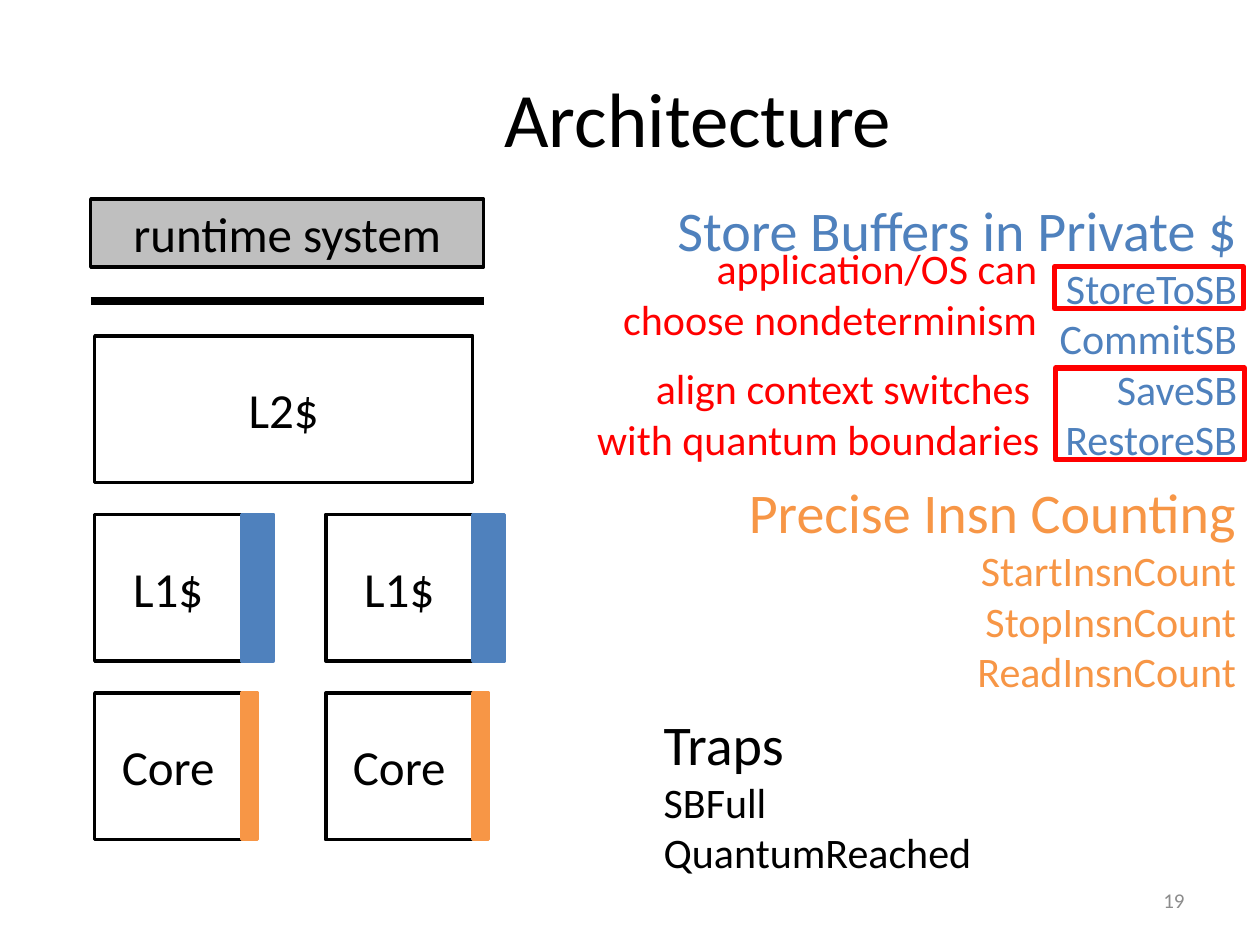
from dataclasses import dataclass

import pptx
import pptx.dml.color
import pptx.enum.shapes
import pptx.enum.text
import pptx.oxml.ns
import pptx.util
from lxml import etree

Cm = pptx.util.Cm
Pt = pptx.util.Pt
ALIGN = pptx.enum.text.PP_ALIGN
ANCHOR = pptx.enum.text.MSO_ANCHOR


@dataclass(frozen=True)
class Theme:
    font: str = "Calibri"
    ink: str = "000000"
    gray: str = "BFBFBF"
    number: str = "8C8C8C"
    buffer: str = "4F81BD"
    counter: str = "F79646"
    alert: str = "FF0000"
    title: int = 44
    heading: int = 32
    block: int = 28
    body: int = 24
    small: int = 12
    outline: float = 2
    highlight: float = 3
    divider: float = 4.5


@dataclass(frozen=True)
class Box:
    """A region in centimetres."""
    left: float
    top: float
    width: float
    height: float

    def inner(self, dx, dy, width, height):
        return Box(self.left + dx, self.top + dy, width, height)

    def emu(self):
        return Cm(self.left), Cm(self.top), Cm(self.width), Cm(self.height)


THEME = Theme()


def rgb(code):
    return pptx.dml.color.RGBColor.from_string(code)


def write_run(paragraph, text, size, color):
    run = paragraph.add_run()
    run.text = text
    run.font.name = THEME.font
    run.font.size = Pt(size)
    run.font.color.rgb = rgb(color)


def add_block(shapes, box, label="", fill=None, line=THEME.ink, weight=THEME.outline):
    block = shapes.add_shape(pptx.enum.shapes.MSO_SHAPE.RECTANGLE, *box.emu())
    block.shadow.inherit = False
    if fill:
        block.fill.solid()
        block.fill.fore_color.rgb = rgb(fill)
    else:
        block.fill.background()
    block.line.color.rgb = rgb(line)
    block.line.width = Pt(weight)
    if label:
        block.text_frame.vertical_anchor = ANCHOR.MIDDLE
        paragraph = block.text_frame.paragraphs[0]
        paragraph.alignment = ALIGN.CENTER
        write_run(paragraph, label, THEME.block, THEME.ink)


def add_lines(shapes, box, lines, color, align):
    """Unwrapped text, one paragraph for each (text, size)."""
    frame = shapes.add_textbox(*box.emu()).text_frame
    frame.word_wrap = False
    frame.auto_size = pptx.enum.text.MSO_AUTO_SIZE.SHAPE_TO_FIT_TEXT
    for index, (text, size) in enumerate(lines):
        paragraph = frame.add_paragraph() if index else frame.paragraphs[0]
        paragraph.alignment = align
        write_run(paragraph, text, size, color)


def add_caption(shapes, box, text, size, color, align, indent=0.25):
    """A single anchored line: the title or the slide number."""
    frame = shapes.add_textbox(*box.emu()).text_frame
    frame.word_wrap = True
    frame.vertical_anchor = ANCHOR.MIDDLE
    frame.margin_left = Cm(indent)
    frame.paragraphs[0].alignment = align
    write_run(frame.paragraphs[0], text, size, color)


def add_hardware_stack(shapes, box):
    # Runtime system, divided from the hardware below
    add_block(shapes, box.inner(0, 0, box.width, 1.37), "runtime system", THEME.gray)
    y = Cm(box.top + 2.06)
    divider = shapes.add_connector(pptx.enum.shapes.MSO_CONNECTOR.STRAIGHT,
                                   Cm(box.left), y, Cm(box.left + box.width), y)
    divider.line.color.rgb = rgb(THEME.ink)
    divider.line.width = Pt(THEME.divider)
    etree.SubElement(divider._element.spPr, pptx.oxml.ns.qn("a:effectLst"))

    # Shared cache, then a row of private caches and a row of cores
    inset, first_row, pitch = 0.08, 2.76, 3.6
    cache_width, side = 7.62, 2.96
    add_block(shapes, box.inner(inset, first_row, cache_width, side), "L2$")
    rows = [("L1$", 0.64, THEME.buffer), ("Core", 0.32, THEME.counter)]
    for row, (label, strip_width, color) in enumerate(rows, start=1):
        y = first_row + row * pitch
        for x in (inset, inset + cache_width - side):
            add_block(shapes, box.inner(x, y, side, side), label)
            add_block(shapes, box.inner(x + side, y, strip_width, side),
                      fill=color, line=color)


def add_instruction_list(shapes, box, heading, names, color, align=ALIGN.RIGHT):
    lines = [(heading, THEME.heading)] + [(name, THEME.body) for name in names]
    add_lines(shapes, box, lines, color, align)


def add_callout(shapes, box, note, note_dy, note_width, frame_height, gap):
    """A red note to the left of a frame around instruction names."""
    frame_width = 3.81
    group = shapes.add_group_shape().shapes
    add_block(group, box.inner(box.width - frame_width, 0, frame_width, frame_height),
              line=THEME.alert, weight=THEME.highlight)
    note_x = box.width - frame_width - gap - note_width
    add_lines(group, box.inner(note_x, note_dy, note_width, 2.31),
              [(line, THEME.body) for line in note], THEME.alert, ALIGN.RIGHT)


def build_slide(slide):
    shapes = slide.shapes
    add_caption(shapes, Box(1.27, 0.76, 22.86, 3.18), "Architecture",
                THEME.title, THEME.ink, ALIGN.CENTER, indent=3)
    add_caption(shapes, Box(18.2, 17.65, 5.93, 1.01), "19",
                THEME.small, THEME.number, ALIGN.RIGHT)
    add_hardware_stack(shapes, Box(1.83, 4.01, 7.92, 12.92))

    # Instruction set
    add_instruction_list(shapes, Box(13.28, 3.81, 11.91, 5.74),
                         "Store Buffers in Private $",
                         ["StoreToSB", "CommitSB", "SaveSB", "RestoreSB"],
                         THEME.buffer)
    add_instruction_list(shapes, Box(14.73, 9.5, 10.44, 4.7),
                         "Precise Insn Counting",
                         ["StartInsnCount", "StopInsnCount", "ReadInsnCount"],
                         THEME.counter)
    add_instruction_list(shapes, Box(13.13, 14.17, 6.78, 3.68), "Traps",
                         ["SBFull", "QuantumReached"], THEME.ink, ALIGN.LEFT)

    # Remarks on the store buffer instructions
    add_callout(shapes, Box(12.22, 5.38, 12.85, 1.7),
                ["application/OS can", "choose nondeterminism"],
                note_dy=-0.61, note_width=8.94, frame_height=0.84, gap=0.1)
    add_callout(shapes, Box(11.68, 7.42, 13.41, 2.08),
                ["align context switches ", "with quantum boundaries"],
                note_dy=-0.23, note_width=9.53, frame_height=1.85, gap=0.07)


def main():
    deck = pptx.Presentation()
    deck.slide_width, deck.slide_height = Cm(25.4), Cm(19.05)
    build_slide(deck.slides.add_slide(deck.slide_layouts[6]))
    deck.save("out.pptx")


if __name__ == "__main__":
    main()
